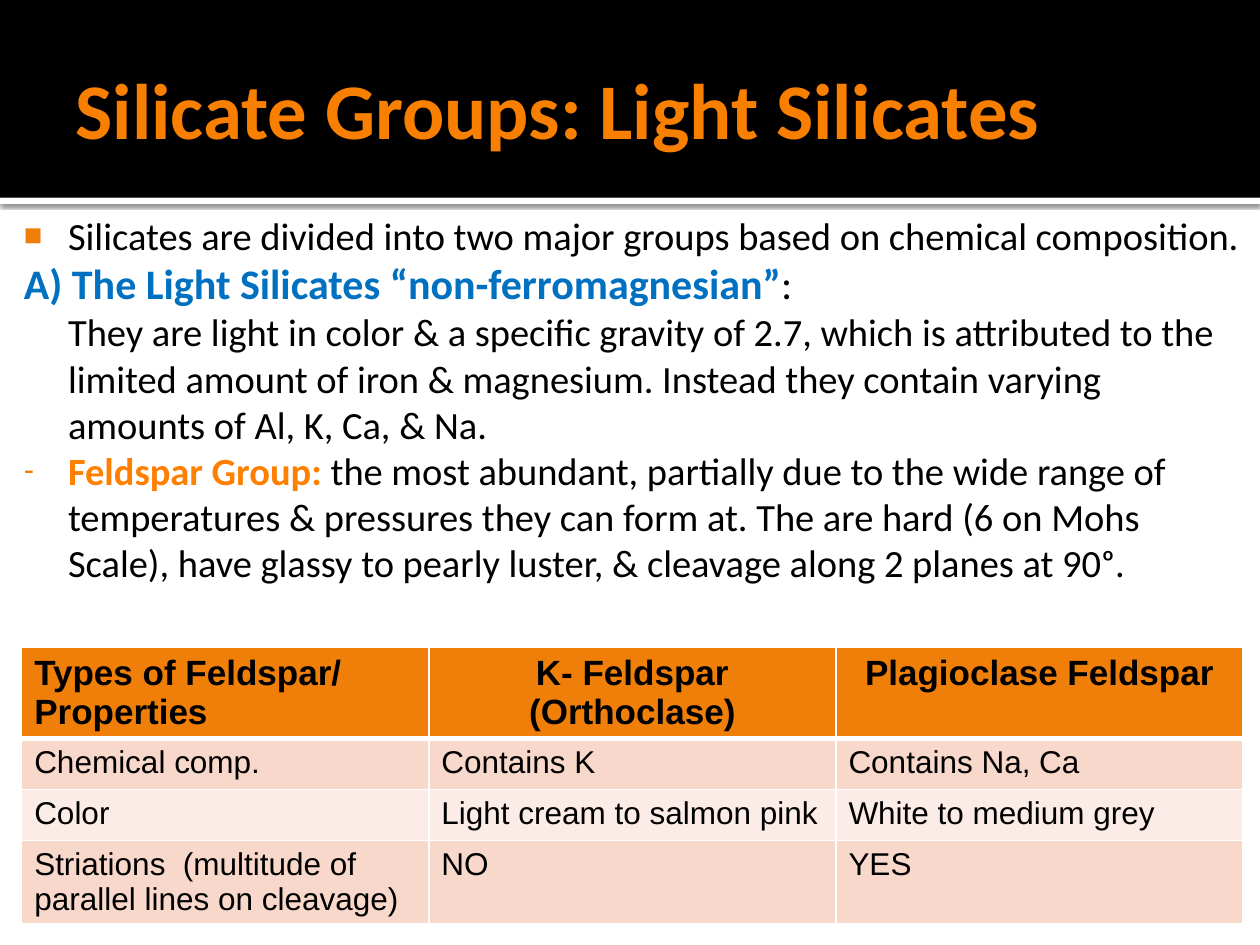
from lxml import etree
from pptx import Presentation
from pptx import util as u
from pptx.dml import color
from pptx.enum import shapes, text
from pptx.oxml import ns

Pt = u.Pt
BLACK, WHITE, ORANGE, BLUE = "000000", "FFFFFF", "F07F09", "0070C0"
LEFT, CENTER = text.PP_ALIGN.LEFT, text.PP_ALIGN.CENTER

INTRO = [
    ("■", [("Silicates are divided into two major groups based on chemical "
            "composition.", 22, BLACK, False)]),
    (None, [("A) The Light Silicates “non-ferromagnesian”", 24, BLUE, True),
            (":", 24, BLACK, False)]),
    (None, [("\tThey are light in color & a specific gravity of 2.7, which is "
             "attributed to the limited amount of iron & magnesium. Instead they "
             "contain varying amounts of Al, K, Ca, & Na.", 22, BLACK, False)]),
    ("-", [("Feldspar Group: ", 22, "FF8000", True),
           ("the most abundant, partially due to the wide range of temperatures & "
            "pressures they can form at. The are hard (6 on Mohs Scale), have glassy "
            "to pearly luster, & cleavage along 2 planes at 90ᵒ.", 22, BLACK, False)]),
]
FELDSPARS = [
    ["Types of Feldspar/ Properties", "K- Feldspar\n(Orthoclase)", "Plagioclase Feldspar"],
    ["Chemical comp.", "Contains K", "Contains Na, Ca"],
    ["Color", "Light cream to salmon pink", "White to medium grey"],
    ["Striations  (multitude of parallel lines on cleavage)", "NO", "YES"],
]


def rgb(value):
    return color.RGBColor.from_string(value)


def set_all(target, values):
    for name, value in values.items():
        setattr(target, name, value)


def add(parent, tag, **attributes):
    return etree.SubElement(parent, ns.qn(tag), attributes)


def paint(part, value):
    part.fill.solid()
    part.fill.fore_color.rgb = rgb(value)


def style_font(font, face, size, value, bold):
    set_all(font, {"name": face, "size": Pt(size), "bold": bold})
    font.color.rgb = rgb(value)


def set_margins(frame, left, top, right, bottom):
    set_all(frame, {"margin_left": Pt(left), "margin_top": Pt(top),
                    "margin_right": Pt(right), "margin_bottom": Pt(bottom),
                    "word_wrap": True, "auto_size": text.MSO_AUTO_SIZE.NONE})


def add_band(slide, left, top, width, height, value):
    band = slide.shapes.add_shape(shapes.MSO_SHAPE.RECTANGLE,
                                  Pt(left), Pt(top), Pt(width), Pt(height))
    paint(band, value)
    band.line.fill.background()
    band.shadow.inherit = False
    return band


def add_header(slide, left, top, width, height):
    rule = add_band(slide, left, top + height, width, 3.6, WHITE)
    effects = rule.element.spPr.find(ns.qn("a:effectLst"))
    shadow = add(effects, "a:outerShdw", blurRad=str(Pt(2.5)), dist=str(Pt(0.8)),
                 dir="5400000", algn="tl", rotWithShape="0")
    add(add(shadow, "a:srgbClr", val=BLACK), "a:alpha", val="60000")
    add_band(slide, left, top, width, height, BLACK)

    title = slide.shapes.title
    title.element.getparent().append(title.element)
    set_all(title, {"left": Pt(left + 36), "top": Pt(top + 12.2),
                    "width": Pt(width - 72), "height": Pt(98.6)})
    frame = title.text_frame
    frame.text = "Silicate Groups: Light Silicates"
    set_margins(frame, 7.2, 3.6, 3.6, 3.6)
    frame.vertical_anchor = text.MSO_ANCHOR.MIDDLE
    heading = frame.paragraphs[0]
    heading.alignment = LEFT
    style_font(heading.runs[0].font, "Calibri", 45, "F97F00", True)


def set_bullet(paragraph, mark):
    props = paragraph._p.get_or_add_pPr()
    set_all_indents = {"marL": Pt(34.6), "indent": Pt(-25.2)}
    for name, value in set_all_indents.items():
        props.set(name, str(value))
    if mark is None:
        add(props, "a:buNone")
        return
    add(add(props, "a:buClr"), "a:srgbClr", val=ORANGE)
    add(props, "a:buSzPct", val="80000")
    add(props, "a:buFont", typeface="Arial")
    add(props, "a:buChar", char=mark)


def add_intro(slide, left, top, width, height):
    frame = slide.shapes.add_textbox(Pt(left), Pt(top), Pt(width), Pt(height)).text_frame
    set_margins(frame, 4.3, 7.2, 7.2, 3.6)
    for index, (mark, runs) in enumerate(INTRO):
        paragraph = frame.add_paragraph() if index else frame.paragraphs[0]
        set_bullet(paragraph, mark)
        for words, size, value, bold in runs:
            run = paragraph.add_run()
            run.text = words
            style_font(run.font, "Calibri", size, value, bold)


def set_borders(cell, widths):
    props = cell._tc.get_or_add_tcPr()
    for index, (side, width) in enumerate(widths.items()):
        line = etree.Element(ns.qn(f"a:{side}"), w=str(Pt(width)))
        add(add(line, "a:solidFill"), "a:srgbClr", val=WHITE)
        props.insert(index, line)


def add_feldspar_table(slide, left, top, width, row_heights):
    table = slide.shapes.add_table(len(FELDSPARS), len(FELDSPARS[0]), Pt(left), Pt(top),
                                   Pt(width), Pt(sum(row_heights))).table
    for row, height in zip(table.rows, row_heights):
        row.height = Pt(height)
    for r, entries in enumerate(FELDSPARS):
        header = r == 0
        fill = ORANGE if header else ("F9D8CC" if r % 2 else "FCECE7")
        for c, words in enumerate(entries):
            cell = table.cell(r, c)
            cell.text = words
            paint(cell, fill)
            set_borders(cell, {"lnL": 1, "lnR": 1, "lnT": 3 if r == 1 else 1,
                               "lnB": 3 if header else 1})
            for paragraph in cell.text_frame.paragraphs:
                paragraph.alignment = CENTER if header and c else LEFT
                style_font(paragraph.runs[0].font, "Arial", 20 if header else 18,
                           BLACK, header)


def main():
    deck = Presentation()
    set_all(deck, {"slide_width": Pt(720), "slide_height": Pt(540)})
    slide = deck.slides.add_slide(deck.slide_layouts[5])
    add_header(slide, 0, 0, 720, 113)
    add_intro(slide, 0, 113.8, 720, 257.8)
    add_feldspar_table(slide, 12.4, 370, 698, [51.4, 29.2, 29.2, 47.4])
    deck.save("out.pptx")


if __name__ == "__main__":
    main()
